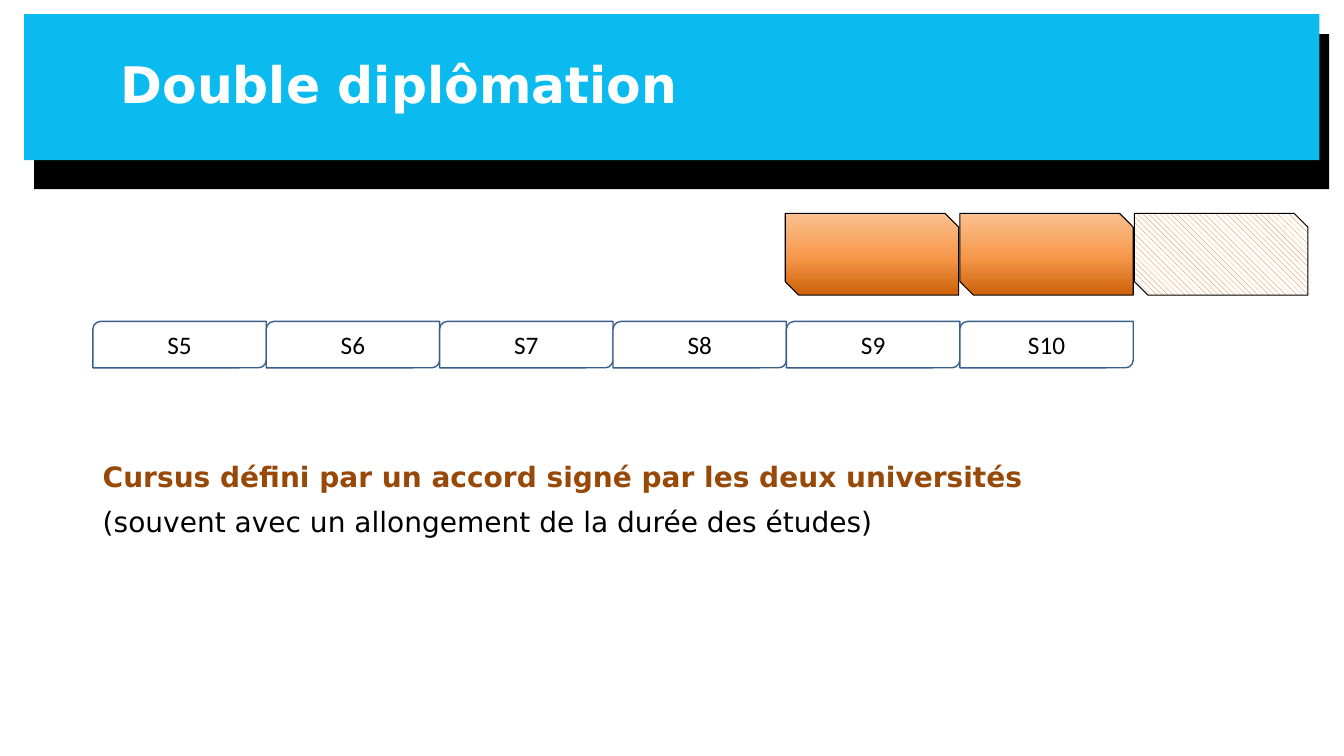
from copy import deepcopy

from pptx import Presentation
from pptx.dml.color import RGBColor
from pptx.enum.dml import MSO_PATTERN
from pptx.enum.shapes import MSO_SHAPE
from pptx.enum.text import MSO_ANCHOR, MSO_AUTO_SIZE, PP_ALIGN
from pptx.oxml.ns import qn
from pptx.util import Cm, Pt

BLACK = RGBColor(0x00, 0x00, 0x00)
WHITE = RGBColor(0xFF, 0xFF, 0xFF)
CYAN = RGBColor(0x0B, 0xBB, 0xEF)
BLUE = RGBColor(0x3A, 0x5F, 0x8C)
BROWN = RGBColor(0x98, 0x48, 0x07)
ORANGE = RGBColor(0xE4, 0x6C, 0x0A)
ORANGE_DARK = RGBColor(0xCC, 0x61, 0x09)
ORANGE_MID = RGBColor(0xF7, 0x99, 0x4C)
ORANGE_LIGHT = RGBColor(0xFA, 0xC0, 0x90)

RECTANGLE = MSO_SHAPE.RECTANGLE
ROUNDED = MSO_SHAPE.ROUND_2_DIAG_RECTANGLE
SNIPPED = MSO_SHAPE.SNIP_2_DIAG_RECTANGLE
WIDE_DIAGONAL = MSO_PATTERN.WIDE_DOWNWARD_DIAGONAL
MIDDLE = MSO_ANCHOR.MIDDLE
NO_AUTOFIT = MSO_AUTO_SIZE.NONE
LEFT, CENTER = PP_ALIGN.LEFT, PP_ALIGN.CENTER

MARGIN = 2.34
BLOCK_WIDTH = 4.37


def add_block(shapes, kind, left, top, width, height):
    block = shapes.add_shape(kind, Cm(left), Cm(top), Cm(width), Cm(height))
    block.shadow.inherit = False
    return block


def write(paragraph, text, color, **font_values):
    run = paragraph.add_run()
    run.text = text
    run.font.color.rgb = color
    for name, value in font_values.items():
        setattr(run.font, name, value)


prs = Presentation()
prs.slide_width, prs.slide_height = Cm(33.87), Cm(19.05)
slide = prs.slides.add_slide(prs.slide_layouts[5])
shapes = slide.shapes

# Title band with its black offset
for left, top, height, color in [(0.86, 0.86, 3.91, BLACK), (0.61, 0.36, 3.68, CYAN)]:
    band = add_block(shapes, RECTANGLE, left, top, 32.64, height)
    band.fill.solid()
    band.fill.fore_color.rgb = color
    band.line.fill.background()

# Title, brought in front of the band
title = shapes.title
title.left, title.top, title.width, title.height = Cm(MARGIN), Cm(0.36), Cm(29.21), Cm(3.68)
title.element.getparent().append(title.element)
frame_format = {"vertical_anchor": MIDDLE, "auto_size": NO_AUTOFIT,
                "word_wrap": True, "margin_left": Cm(0.7)}
for name, value in frame_format.items():
    setattr(title.text_frame, name, value)
heading = title.text_frame.paragraphs[0]
heading.alignment = LEFT
heading.line_spacing = 0.9
write(heading, "Double diplômation", WHITE, name="DejaVu Sans", size=Pt(36), bold=True)

# Explanation
explanation = shapes.add_textbox(Cm(MARGIN), Cm(11.56), Cm(29.57), Cm(6.3)).text_frame
explanation.word_wrap = True
agreement = explanation.paragraphs[0]
duration = explanation.add_paragraph()
duration.space_before = Pt(10)
for paragraph, text, color, bold in [
    (agreement, "Cursus défini par un accord signé par les deux universités", BROWN, True),
    (duration, "(souvent avec un allongement de la durée des études)", BLACK, False),
]:
    paragraph.line_spacing = 0.9
    write(paragraph, text, color, name="DejaVu Sans", size=Pt(20), bold=bold)

# Semesters S5 to S10
timeline = shapes.add_group_shape()
for index in range(6):
    semester = add_block(timeline.shapes, ROUNDED, MARGIN + index * BLOCK_WIDTH, 8.1,
                         BLOCK_WIDTH, 1.17)
    semester.fill.solid()
    semester.fill.fore_color.rgb = WHITE
    semester.line.color.rgb = BLUE
    semester.line.width = Pt(1)
    semester.text_frame.vertical_anchor = MIDDLE
    label = semester.text_frame.paragraphs[0]
    label.alignment = CENTER
    write(label, f"S{index + 5}", BLACK, name="Calibri", size=Pt(18))

# Semesters abroad: two full ones and a hatched extension
for index in range(3):
    abroad = add_block(shapes, SNIPPED, 19.79 + index * 4.4, 5.38, BLOCK_WIDTH, 2.06)
    abroad.line.color.rgb = BLACK
    abroad.line.width = Pt(0.75)
    fill = abroad.fill
    if index == 2:
        fill.patterned()
        fill.pattern = WIDE_DIAGONAL
        fill.fore_color.rgb = ORANGE
        fill.back_color.rgb = WHITE
        continue
    fill.gradient()
    fill.gradient_angle = 90
    stop_list = abroad.element.spPr.find(".//" + qn("a:gsLst"))
    stop_list.append(deepcopy(stop_list[0]))
    stops = [(0, ORANGE_DARK), (0.48, ORANGE_MID), (1, ORANGE_LIGHT)]
    for stop, (position, color) in zip(fill.gradient_stops, stops):
        stop.position = position
        stop.color.rgb = color

prs.save("out.pptx")
